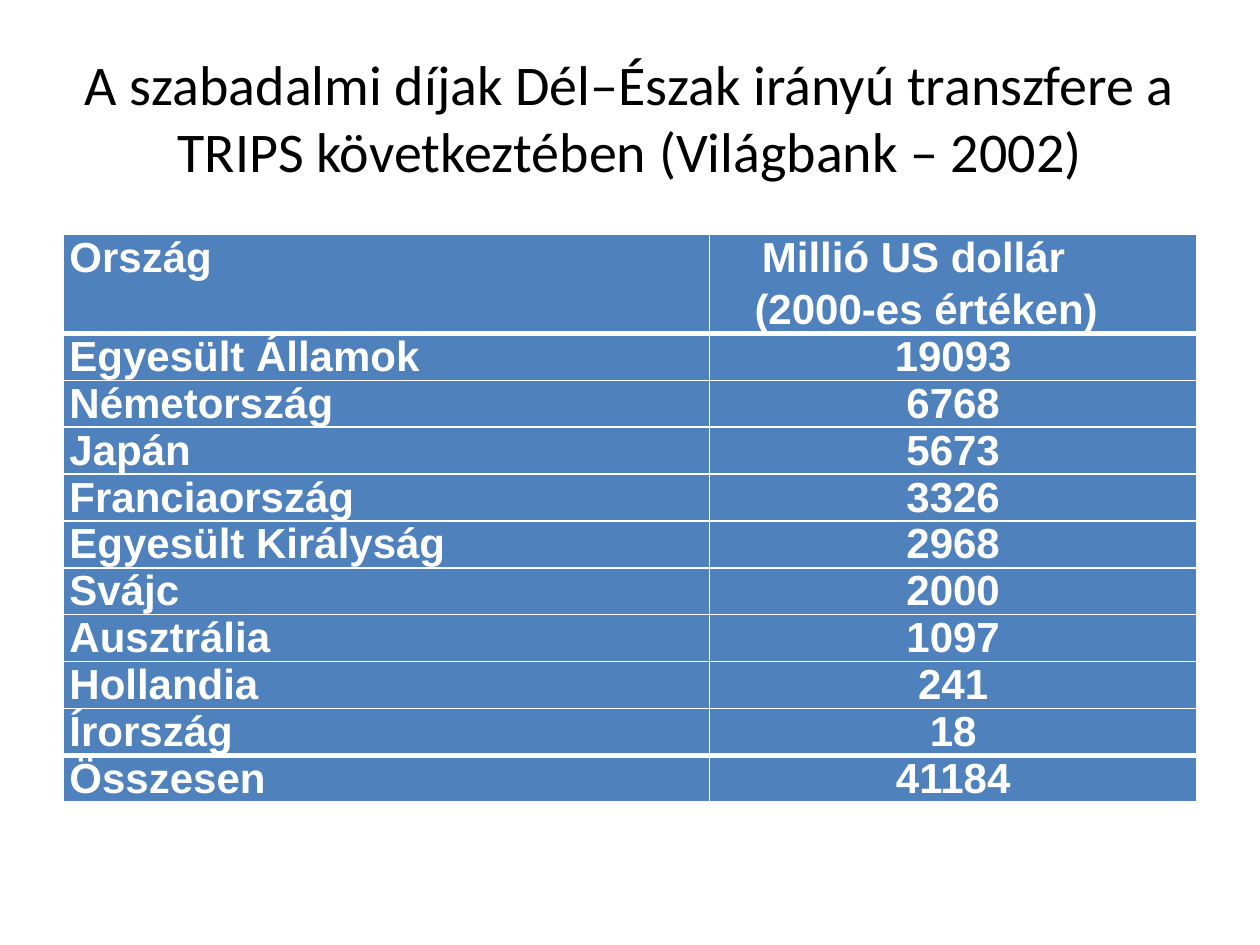
from lxml.etree import SubElement as Sub
from pptx import Presentation
from pptx.dml.color import RGBColor as RGB
from pptx.enum.text import MSO_ANCHOR as Anchor, PP_ALIGN as Align
from pptx.oxml.ns import qn
from pptx.util import Cm, Pt

TITLE = "A szabadalmi díjak Dél–Észak irányú transzfere a TRIPS következtében (Világbank – 2002)"
HEAD = ("Ország", ("Millió US dollár", "(2000-es értéken)"))
ROWS = [
    ("Egyesült Államok", "19093"),
    ("Németország", "6768"),
    ("Japán", "5673"),
    ("Franciaország", "3326"),
    ("Egyesült Királyság", "2968"),
    ("Svájc", "2000"),
    ("Ausztrália", "1097"),
    ("Hollandia", "241"),
    ("Írország", "18"),
    ("Összesen", "41184"),
]
COLORS = {"text": "000000", "light": "FFFFFF", "cell": "4F81BD"}
WIDTHS = (13.03, 9.83)
HEAD_H, ROW_H = 1.95, 0.94
THIN, THICK = 1, 3


def write(para, text, size=24, font="Arial", color="light", bold=True,
          align=Align.LEFT, left=0, right=0, first=0, before=0):
    props = para._p.get_or_add_pPr()
    for key, val in (("marL", left), ("marR", right), ("indent", first)):
        props.set(key, str(Cm(val)))
    para.alignment = align
    para.space_before = Pt(before)
    run = para.add_run()
    run.text = text
    run.font.size, run.font.name, run.font.bold = Pt(size), font, bold
    run.font.color.rgb = RGB.from_string(COLORS[color])


def border(cell, top, bottom):
    props = cell._tc.get_or_add_tcPr()
    sides = {"lnL": THIN, "lnR": THIN, "lnT": top, "lnB": bottom}
    for side, width in sides.items():
        line = Sub(props, qn("a:" + side), w=str(Pt(width)))
        fill = Sub(line, qn("a:solidFill"))
        Sub(fill, qn("a:srgbClr"), val=COLORS["light"])


def style(cell, top, bottom):
    border(cell, top, bottom)
    cell.fill.solid()
    cell.fill.fore_color.rgb = RGB.from_string(COLORS["cell"])
    cell.margin_left = cell.margin_right = 0
    cell.margin_top = cell.margin_bottom = 0


def add_title(slide):
    title = slide.shapes.title
    title.left, title.top = Cm(1.27), Cm(0.76)
    title.width, title.height = Cm(22.86), Cm(3.18)
    frame = title.text_frame
    frame.word_wrap = True
    frame.vertical_anchor = Anchor.MIDDLE
    write(frame.paragraphs[0], TITLE, size=32, font="Calibri",
          color="text", bold=False, align=Align.CENTER)


def add_data(slide):
    count = len(ROWS) + 1
    table = slide.shapes.add_table(
        count, 2, Cm(1.27), Cm(4.72), Cm(sum(WIDTHS)),
        Cm(HEAD_H + ROW_H * len(ROWS))).table
    for col, width in zip(table.columns, WIDTHS):
        col.width = Cm(width)
    for num, row in enumerate(table.rows):
        row.height = Cm(ROW_H if num else HEAD_H)
        top = THICK if num in (1, count - 1) else THIN
        bottom = THICK if num in (0, count - 2) else THIN
        for cell in row.cells:
            style(cell, top, bottom)

    label, (unit, year) = HEAD
    write(table.cell(0, 0).text_frame.paragraphs[0], label, left=0.13)
    frame = table.cell(0, 1).text_frame
    write(frame.paragraphs[0], unit, left=0.91, first=0.15)
    write(frame.add_paragraph(), year, left=0.91, before=3.2)
    for num, (land, value) in enumerate(ROWS, 1):
        write(table.cell(num, 0).text_frame.paragraphs[0], land, left=0.13)
        write(table.cell(num, 1).text_frame.paragraphs[0], value,
              align=Align.CENTER, left=1.47, right=1.47)


def main():
    deck = Presentation()
    deck.slide_width, deck.slide_height = Cm(25.4), Cm(19.05)
    slide = deck.slides.add_slide(deck.slide_layouts[5])
    add_title(slide)
    add_data(slide)
    deck.save("out.pptx")


if __name__ == "__main__":
    main()
